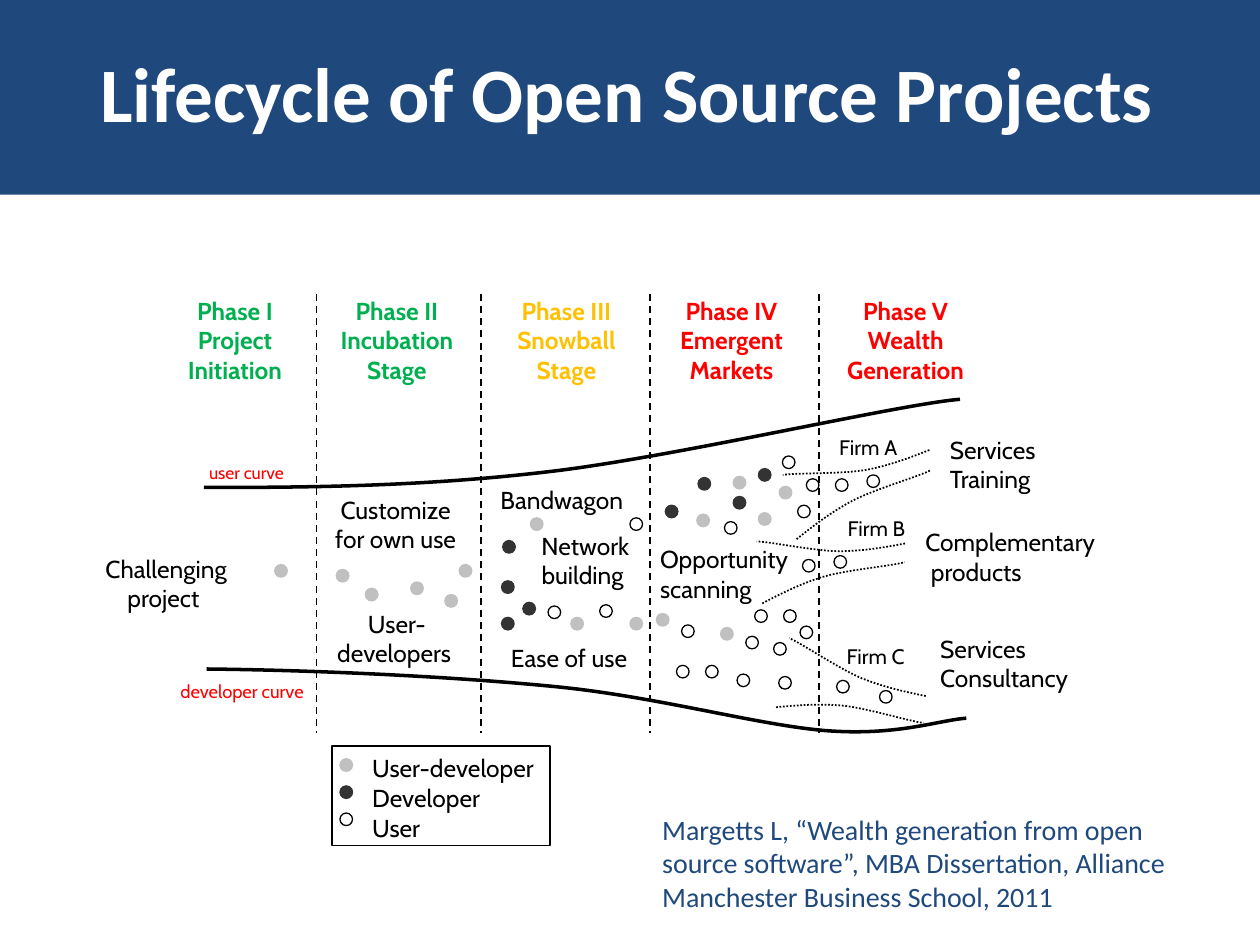
from lxml import etree
from pptx import Presentation
from pptx.dml.color import RGBColor
from pptx.enum.dml import MSO_LINE
from pptx.enum.shapes import MSO_CONNECTOR, MSO_SHAPE
from pptx.enum.text import MSO_ANCHOR, MSO_AUTO_SIZE, PP_ALIGN
from pptx.oxml.ns import qn
from pptx.util import Pt

DASH, DOTTED = MSO_LINE.DASH, MSO_LINE.ROUND_DOT
STRAIGHT = MSO_CONNECTOR.STRAIGHT
OVAL, RECTANGLE = MSO_SHAPE.OVAL, MSO_SHAPE.RECTANGLE
LEFT, CENTER = PP_ALIGN.LEFT, PP_ALIGN.CENTER
TOP, MIDDLE = MSO_ANCHOR.TOP, MSO_ANCHOR.MIDDLE
NO_AUTOFIT = MSO_AUTO_SIZE.NONE

NAVY = RGBColor(0x1F, 0x49, 0x7D)
WHITE = RGBColor(0xFF, 0xFF, 0xFF)
BLACK = RGBColor(0x00, 0x00, 0x00)
GREEN = RGBColor(0x00, 0xB0, 0x50)
AMBER = RGBColor(0xFF, 0xC0, 0x00)
RED = RGBColor(0xFF, 0x00, 0x00)
SILVER = RGBColor(0xC0, 0xC0, 0xC0)
CHARCOAL = RGBColor(0x33, 0x33, 0x33)

DIAGRAM_FONT, MAIN_FONT = "Cabin", "Calibri"
DOT_SIZE = 7.2

USER_DEVELOPER, DEVELOPER, USER = "User-developer", "Developer", "User"
DOT_STYLES = {
    USER_DEVELOPER: (SILVER, SILVER),
    DEVELOPER: (CHARCOAL, CHARCOAL),
    USER: (None, BLACK),
}
DOTS = {
    USER_DEVELOPER: [
        (109, 156.6), (144.2, 159.4), (206.2, 173.8), (160.8, 170.2), (186.7, 166.6),
        (214.4, 156.6), (255.1, 129.9), (312, 186.8), (278.2, 186.8), (350.2, 127.8),
        (371, 106.2), (385.4, 127), (397.3, 111.9), (327.1, 184.6), (363.8, 192.6)],
    DEVELOPER: [
        (238.6, 165.9), (238.6, 186.8), (239.3, 142.9), (350.9, 106.9),
        (371, 117.7), (332.2, 122.7), (385.4, 101.8), (250.8, 178.2)],
    USER: [
        (265.2, 180.3), (312, 129.9), (399.1, 94.6), (366, 132.1), (407.8, 122.7),
        (412.8, 107.6), (429.4, 107.6), (447.4, 105.4), (294.7, 179.6), (397, 220.6),
        (430.1, 222.8), (454.6, 228.6), (373.2, 219.2), (410.6, 153.7), (428.6, 151.5),
        (394.1, 201.2), (341.5, 191.1), (378.2, 197.6), (383.3, 182.5), (399.8, 182.5),
        (409.2, 191.8), (338.6, 214.2), (355.2, 214.2)],
}
PHASES = [
    (86.3, 81, GREEN, "Phase I\nProject\nInitiation"),
    (178.8, 96, GREEN, "Phase II\nIncubation Stage"),
    (275.7, 84, AMBER, "Phase III\nSnowball Stage"),
    (370, 93, RED, "Phase IV\nEmergent\nMarkets"),
    (469.5, 93, RED, "Phase V\nWealth Generation"),
]
DIVIDERS = [132.9, 227, 323.5, 420]
MAIN_CURVES = [
    [(68.6, 112.6), (132, 112.6), (196.1, 111.9), (268.1, 103.3),
     (340.1, 94.6), (465.4, 65.1), (500.6, 62.2)],
    [(70.1, 216.3), (133.4, 217), (210.5, 220.6), (269.5, 226.4), (328.6, 232.2),
     (386.2, 248.7), (425, 251.6), (464.6, 254.5), (487.7, 245.8), (504.2, 244.4)],
]
FIRM_CURVE = [(0, 0), (0.15, 0.01), (0.3, 0.03), (0.46, 0.18),
              (0.63, 0.35), (0.92, 0.93), (1, 1)]
FIRM_CURVE_PLACES = [
    (399.8, 88.9, 82.8, 18.7, 157.6),
    (403.4, 113.4, 84.2, 18, 320.7),
    (385.4, 135, 82.8, 18, 168.5),
    (386.9, 158, 82.8, 18, 331.6),
    (400.6, 206.2, 82.8, 18, 190.7),
    (396.2, 233.6, 82.8, 18, 353.8),
]
LABELS = [
    ((245.8, 133.9, 81.4, 36), "Network building ", 14, BLACK, CENTER),
    ((0.2, 147, 93.6, 36.7), "Challenging project ", 14, BLACK, CENTER),
    ((227, 198, 103.7, 16.6), "Ease of use ", 14, BLACK, CENTER),
    ((130.6, 113.1, 95, 31), "Customize for own use", 14, BLACK, CENTER),
    ((127, 178.2, 103.7, 42.5), "User-developers ", 14, BLACK, CENTER),
    ((226.7, 107.6, 95.8, 17.3), "Bandwagon ", 14, BLACK, CENTER),
    ((62.2, 94.3, 63.4, 18.7), "user curve ", 10, RED, CENTER),
    ((45.4, 219.2, 92.2, 18.7), "developer curve ", 10.5, RED, CENTER),
    ((322.1, 141.4, 103.7, 28.8), "Opportunity\nscanning", 14, BLACK, LEFT),
    ((420, 78.8, 59, 25.2), "Firm A ", 12, BLACK, CENTER),
    ((419.7, 124.9, 69.1, 16.6), "Firm B ", 12, BLACK, CENTER),
    ((425.3, 198.3, 56.9, 18.7), "Firm C ", 12, BLACK, CENTER),
    ((487.7, 78.8, 73.4, 47.5), "Services\nTraining", 14, BLACK, LEFT),
    ((473.7, 131.8, 150.5, 32.4), "Complementary\n products", 14, BLACK, LEFT),
    ((482.2, 192.8, 141.1, 47.5), "Services\nConsultancy", 14, BLACK, LEFT),
]


def write_text(frame, text, size, color, align, font=DIAGRAM_FONT, bold=False, anchor=TOP):
    """Fill a text frame and format every run in it."""
    frame.text = text
    frame.word_wrap = True
    frame.auto_size = NO_AUTOFIT
    frame.vertical_anchor = anchor
    for paragraph in frame.paragraphs:
        paragraph.alignment = align
        for run in paragraph.runs:
            run.font.name, run.font.size, run.font.bold = font, Pt(size), bold
            run.font.color.rgb = color


def add_label(slide, box, text, size, color, align, font=DIAGRAM_FONT, bold=False):
    """Add a wrapping text box."""
    label = slide.shapes.add_textbox(*map(Pt, box))
    write_text(label.text_frame, text, size, color, align, font, bold)


def style_shape(shape, fill, line, width):
    """Give a shape its fill and outline, where None means no paint."""
    shape.shadow.inherit = False
    if fill is None:
        shape.fill.background()
    else:
        shape.fill.solid()
        shape.fill.fore_color.rgb = fill
    if line is None:
        shape.line.fill.background()
    else:
        shape.line.color.rgb = line
        shape.line.width = Pt(width)


def add_dot(slide, x, y, role):
    """Add the dot that stands for one participant."""
    dot = slide.shapes.add_shape(OVAL, Pt(x), Pt(y), Pt(DOT_SIZE), Pt(DOT_SIZE))
    style_shape(dot, *DOT_STYLES[role], 0.75)


def add_curve(slide, left, top, knots, width, dash=None, rotation=0):
    """Draw an open chain of cubic Bézier segments relative to a corner."""
    points = [(Pt(left + x), Pt(top + y)) for x, y in knots]
    builder = slide.shapes.build_freeform(*points[0])
    builder.add_line_segments(points[1:], close=False)
    curve = builder.convert_to_shape()
    outline = curve.element.spPr.find(".//" + qn("a:path"))
    sides = outline.findall(qn("a:lnTo"))
    for first in range(0, len(sides), 3):
        bend = etree.SubElement(outline, qn("a:cubicBezTo"))
        for side in sides[first:first + 3]:
            bend.append(side[0])
            outline.remove(side)
    style_shape(curve, None, BLACK, width)
    curve.line.dash_style = dash
    curve.rotation = rotation


def add_phases(slide, left, top):
    """Add the phase headings and the dashed dividers between them."""
    for center, width, color, heading in PHASES:
        add_label(slide, (left + center - width / 2, top - 0.4, width, 60),
                  heading, 14, color, CENTER, bold=True)
    for x in DIVIDERS:
        divider = slide.shapes.add_connector(
            STRAIGHT, Pt(left + x), Pt(top + 2), Pt(left + x), Pt(top + 253))
        divider.line.color.rgb = BLACK
        divider.line.width = Pt(1)
        divider.line.dash_style = DASH
        etree.SubElement(divider.element.spPr, qn("a:effectLst"))


def add_lifecycle(slide, left, top):
    """Add the curves, participants and labels of the diagram."""
    for knots in MAIN_CURVES:
        add_curve(slide, left, top, knots, 2)
    for x, y, width, height, rotation in FIRM_CURVE_PLACES:
        knots = [(width * across, height * down) for across, down in FIRM_CURVE]
        add_curve(slide, left + x, top + y, knots, 1, DOTTED, rotation)
    for role, places in DOTS.items():
        for x, y in places:
            add_dot(slide, left + x, top + y, role)
    for (x, y, width, height), *content in LABELS:
        add_label(slide, (left + x, top + y, width, height), *content)


def add_legend(slide, left, top, width, height):
    """Add the framed key of participant roles."""
    frame = slide.shapes.add_shape(RECTANGLE, *map(Pt, (left, top, width, height)))
    style_shape(frame, None, BLACK, 1)
    for row, role in enumerate(DOT_STYLES):
        add_dot(slide, left + 4.4, top + 7.4 + 15.5 * row, role)
        add_label(slide, (left + 15.6, top + 0.8 + 17 * row, width - 15.6, 17),
                  role, 14, BLACK, LEFT)


def add_heading(slide, left, top, width, height):
    """Place the slide title."""
    title = slide.shapes.title
    title.left, title.top, title.width, title.height = map(Pt, (left, top, width, height))
    write_text(title.text_frame, "Lifecycle of Open Source Projects", 44, WHITE, CENTER,
               MAIN_FONT, True, MIDDLE)


def main():
    """Build and save the slide."""
    deck = Presentation()
    deck.slide_width, deck.slide_height = Pt(720), Pt(540)
    slide = deck.slides.add_slide(deck.slide_layouts[5])
    slide.background.fill.solid()
    slide.background.fill.fore_color.rgb = NAVY
    panel = slide.shapes.add_shape(RECTANGLE, 0, Pt(111.3), Pt(720), Pt(428.7))
    style_shape(panel, WHITE, None, 0)
    add_heading(slide, 22.6, 22.3, 671.8, 60.5)
    add_lifecycle(slide, 48, 166)
    add_phases(slide, 48, 166)
    add_legend(slide, 189.9, 426.2, 124.6, 57)
    add_label(slide, (371.3, 460.5, 317.5, 65.5),
              "Margetts L, “Wealth generation from open source software”, "
              "MBA Dissertation, Alliance Manchester Business School, 2011",
              16, NAVY, LEFT, MAIN_FONT)
    deck.save("out.pptx")


if __name__ == "__main__":
    main()
